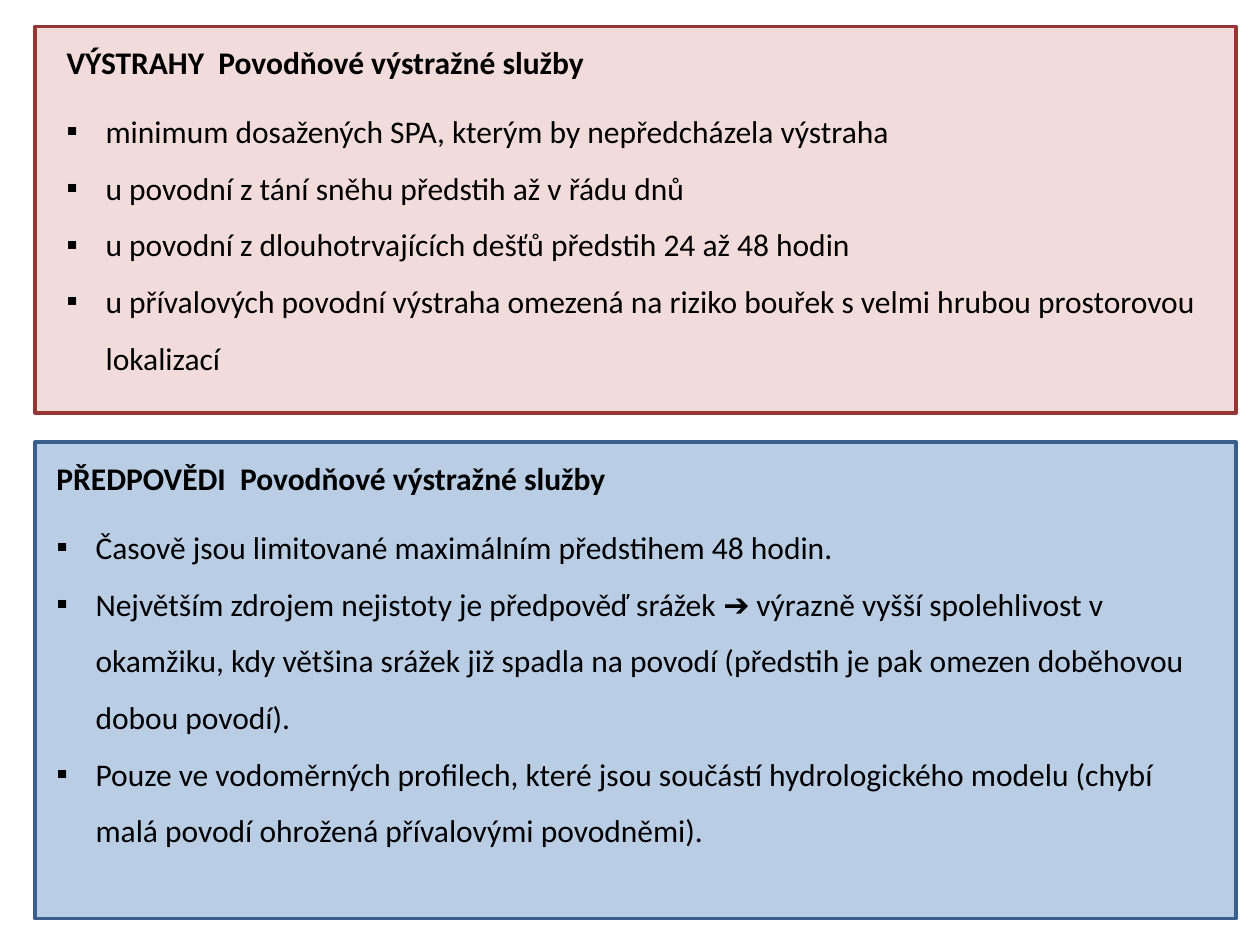
from dataclasses import dataclass

from lxml import etree
from pptx import Presentation
from pptx import util as u
from pptx.dml.color import RGBColor
from pptx.enum import shapes, text
from pptx.oxml import ns

COLOURS = {
    "text": "000000",
    "warning_fill": "F2DCDB",
    "warning_line": "953735",
    "forecast_fill": "B9CDE5",
    "forecast_line": "3A5F8C",
}
FONT = "Calibri"
PANEL_LEFT, PANEL_WIDTH = 0.28, 9.53
BULLETS_WIDTH = 9.21
TITLE_OFFSET, TITLE_HEIGHT = 0.08, 0.4
BULLET_INDENT = 0.31


@dataclass(frozen=True)
class Panel:
    name: str
    top: float
    height: float
    text_left: float
    title: str
    title_width: float
    bullets: tuple[str, ...]
    bullets_height: float


PANELS = (
    Panel(
        "forecast", 3.51, 3.78, 0.35,
        "PŘEDPOVĚDI  Povodňové výstražné služby", 4.6,
        (
            "Časově jsou limitované maximálním předstihem 48 hodin.",
            "Největším zdrojem nejistoty je předpověď srážek ➔ výrazně vyšší "
            "spolehlivost v okamžiku, kdy většina srážek již spadla na povodí "
            "(předstih je pak omezen doběhovou dobou povodí).",
            "Pouze ve vodoměrných profilech, které jsou součástí hydrologického "
            "modelu (chybí malá povodí ohrožená přívalovými povodněmi).",
        ),
        2.83,
    ),
    Panel(
        "warning", 0.21, 3.07, 0.43,
        "VÝSTRAHY  Povodňové výstražné služby", 4.34,
        (
            "minimum dosažených SPA, kterým by nepředcházela výstraha",
            "u povodní z tání sněhu předstih až v řádu dnů",
            "u povodní z dlouhotrvajících dešťů předstih 24 až 48 hodin",
            "u přívalových povodní výstraha omezená na riziko bouřek s velmi "
            "hrubou prostorovou lokalizací",
        ),
        2.37,
    ),
)


def colour(name: str) -> RGBColor:
    return RGBColor.from_string(COLOURS[name])


def add_bullet(paragraph) -> None:
    """Give the paragraph a square bullet with a hanging indent."""
    properties = paragraph._p.get_or_add_pPr()
    properties.set("marL", str(u.Inches(BULLET_INDENT)))
    properties.set("indent", str(-u.Inches(BULLET_INDENT)))
    etree.SubElement(properties, ns.qn("a:buFont"), typeface=FONT)
    etree.SubElement(properties, ns.qn("a:buChar"), char="▪")


def add_text(slide, lines: tuple[str, ...], left: float, top: float,
             width: float, height: float, *, bold: bool = False,
             wrap: bool = True, bulleted: bool = False,
             line_spacing: float = 1.0) -> None:
    box = slide.shapes.add_textbox(*map(u.Inches, (left, top, width, height)))
    frame = box.text_frame
    frame.word_wrap = wrap
    frame.auto_size = text.MSO_AUTO_SIZE.SHAPE_TO_FIT_TEXT
    for index, line in enumerate(lines):
        paragraph = frame.add_paragraph() if index else frame.paragraphs[0]
        paragraph.line_spacing = line_spacing
        if bulleted:
            add_bullet(paragraph)
        run = paragraph.add_run()
        run.text = line
        run.font.name = FONT
        run.font.size = u.Pt(18)
        run.font.bold = bold
        run.font.color.rgb = colour("text")


def add_panel_box(slide, panel: Panel) -> None:
    shape = slide.shapes.add_shape(
        shapes.MSO_SHAPE.RECTANGLE,
        *map(u.Inches, (PANEL_LEFT, panel.top, PANEL_WIDTH, panel.height)))
    shape.shadow.inherit = False
    shape.fill.solid()
    shape.fill.fore_color.rgb = colour(f"{panel.name}_fill")
    shape.line.color.rgb = colour(f"{panel.name}_line")
    shape.line.width = u.Pt(2)


def add_panel_text(slide, panel: Panel) -> None:
    title_top = panel.top + TITLE_OFFSET
    add_text(slide, panel.bullets, panel.text_left, title_top + TITLE_HEIGHT,
             BULLETS_WIDTH, panel.bullets_height, bulleted=True, line_spacing=1.5)
    add_text(slide, (panel.title,), panel.text_left, title_top,
             panel.title_width, TITLE_HEIGHT, bold=True, wrap=False)


def main() -> None:
    presentation = Presentation()
    presentation.slide_width = u.Inches(10)
    presentation.slide_height = u.Inches(7.5)
    slide = presentation.slides.add_slide(presentation.slide_layouts[6])
    for panel in PANELS:
        add_panel_box(slide, panel)
    for panel in reversed(PANELS):
        add_panel_text(slide, panel)
    presentation.save("out.pptx")


if __name__ == "__main__":
    main()
